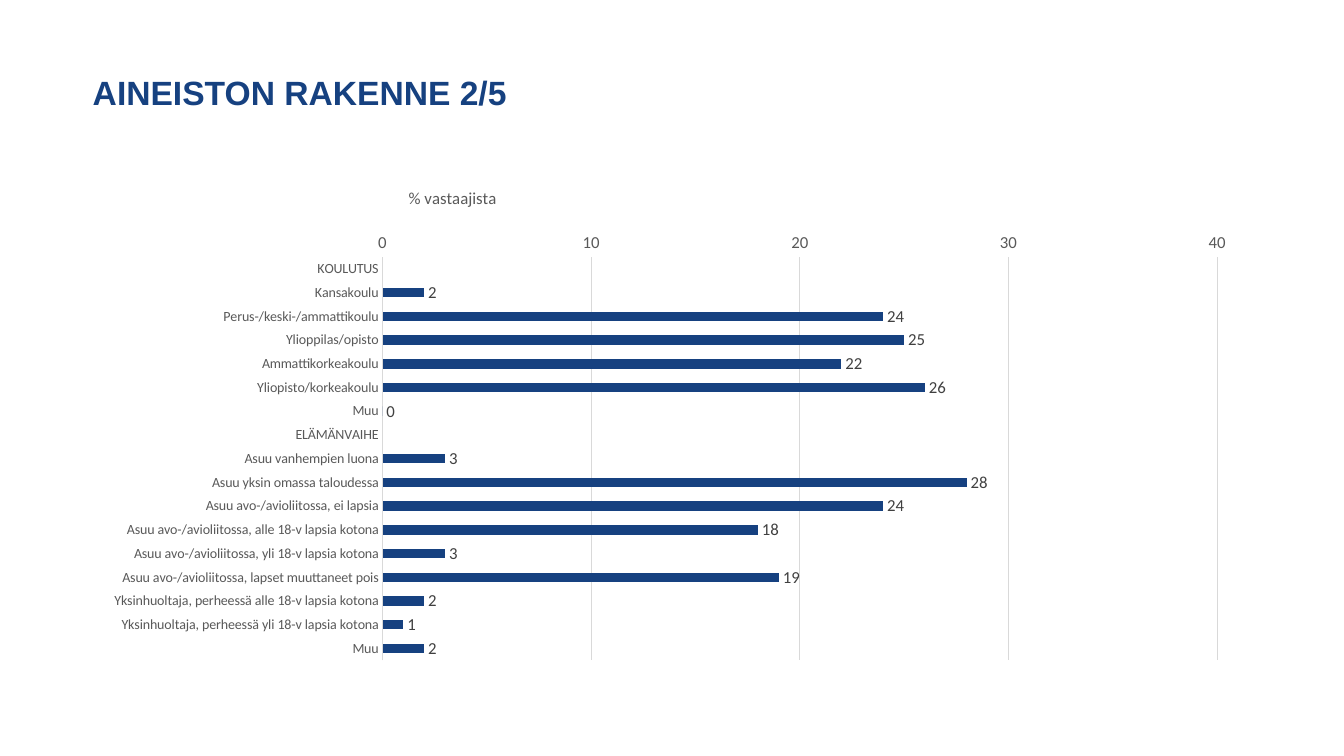
from lxml.etree import SubElement
from pptx import Presentation
from pptx.chart.data import CategoryChartData
from pptx.dml.color import RGBColor
from pptx.enum.chart import XL_CHART_TYPE, XL_LABEL_POSITION, XL_TICK_MARK
from pptx.enum.text import MSO_ANCHOR, PP_ALIGN
from pptx.oxml.ns import qn
from pptx.util import Pt

NAVY, GRAY, DARK, RULE = "164180", "595959", "404040", "D9D9D9"

ROWS = [
    ("KOULUTUS", None),
    ("Kansakoulu", 2),
    ("Perus-/keski-/ammattikoulu", 24),
    ("Ylioppilas/opisto", 25),
    ("Ammattikorkeakoulu", 22),
    ("Yliopisto/korkeakoulu", 26),
    ("Muu", 0),
    ("ELÄMÄNVAIHE", None),
    ("Asuu vanhempien luona", 3),
    ("Asuu yksin omassa taloudessa", 28),
    ("Asuu avo-/avioliitossa, ei lapsia", 24),
    ("Asuu avo-/avioliitossa, alle 18-v lapsia kotona", 18),
    ("Asuu avo-/avioliitossa, yli 18-v lapsia kotona", 3),
    ("Asuu avo-/avioliitossa, lapset muuttaneet pois", 19),
    ("Yksinhuoltaja, perheessä alle 18-v lapsia kotona", 2),
    ("Yksinhuoltaja, perheessä yli 18-v lapsia kotona", 1),
    ("Muu", 2),
]


def paint(color, code):
    color.rgb = RGBColor.from_string(code)


def style(font, size, code, name="Calibri", bold=False):
    font.size, font.name, font.bold = Pt(size), name, bold
    paint(font.color, code)


def rule(line):
    line.width = Pt(0.75)
    paint(line.color, RULE)


def pin(node, index, **parts):
    """Fix a chart part's place, as shares of the chart area."""
    for old in node.findall(qn("c:layout")):
        node.remove(old)
    layout = SubElement(node, qn("c:layout"))
    node.insert(index, layout)
    manual = SubElement(layout, qn("c:manualLayout"))
    for tag, value in parts.items():
        SubElement(manual, qn("c:" + tag)).set("val", str(value))


def add_title(slide, text, x, y, w, h):
    title = slide.shapes.title
    title.left, title.top, title.width, title.height = map(Pt, (x, y, w, h))
    frame = title.text_frame
    frame.word_wrap = True
    frame.vertical_anchor = MSO_ANCHOR.MIDDLE
    frame.margin_bottom = Pt(28.4)  # lifts the text above the middle
    para = frame.paragraphs[0]
    para.alignment, para.line_spacing = PP_ALIGN.LEFT, 0.9
    run = para.add_run()
    run.text = text
    style(run.font, 24, NAVY, "Arial", True)


def add_bars(slide, x, y, w, h):
    data = CategoryChartData()
    data.categories = [name for name, _ in ROWS]
    data.add_series("Series 1", [value for _, value in ROWS])
    chart = slide.shapes.add_chart(
        XL_CHART_TYPE.BAR_CLUSTERED, *map(Pt, (x, y, w, h)), data).chart
    style(chart.font, 10, "000000")
    chart.has_legend = False

    # Heading
    chart.has_title = True
    head = chart.chart_title
    run = head.text_frame.paragraphs[0].add_run()
    run.text = "% vastaajista"
    style(run.font, 12, GRAY)
    head.include_in_layout = False
    pin(head._element, 1, xMode="edge", yMode="edge", x=0.27, y=0.01)
    pin(chart._chartSpace.chart.plotArea, 0, layoutTarget="inner",
        xMode="edge", yMode="edge", x=0.25, y=0.16, w=0.72, h=0.82)

    # Axes
    names, scale = chart.category_axis, chart.value_axis
    for axis, size in ((names, 10), (scale, 12)):
        axis.major_tick_mark = axis.minor_tick_mark = XL_TICK_MARK.NONE
        style(axis.tick_labels.font, size, GRAY)
    names.reverse_order = True
    rule(names.format.line)
    scale.minimum_scale, scale.maximum_scale, scale.major_unit = 0, 40, 10
    scale.tick_labels.number_format = "#,##0"
    scale.tick_labels.number_format_is_linked = False
    scale.format.line.fill.background()
    scale.has_major_gridlines = True
    rule(scale.major_gridlines.format.line)

    # Bars and values
    plot = chart.plots[0]
    plot.gap_width, plot.vary_by_categories = 150, False
    bars = plot.series[0]
    bars.invert_if_negative = False
    bars.format.fill.solid()
    paint(bars.format.fill.fore_color, NAVY)
    labels = bars.data_labels
    labels.show_value = True
    labels.position = XL_LABEL_POSITION.OUTSIDE_END
    style(labels.font, 12, DARK)


def main():
    deck = Presentation()
    deck.slide_width, deck.slide_height = Pt(960), Pt(540)
    slide = deck.slides.add_slide(deck.slide_layouts[5])
    add_bars(slide, 66.24, 127.44, 828, 351.36)
    add_title(slide, "AINEISTON RAKENNE 2/5", 59.04, 28.08, 828, 104.4)
    deck.save("out.pptx")


if __name__ == "__main__":
    main()
